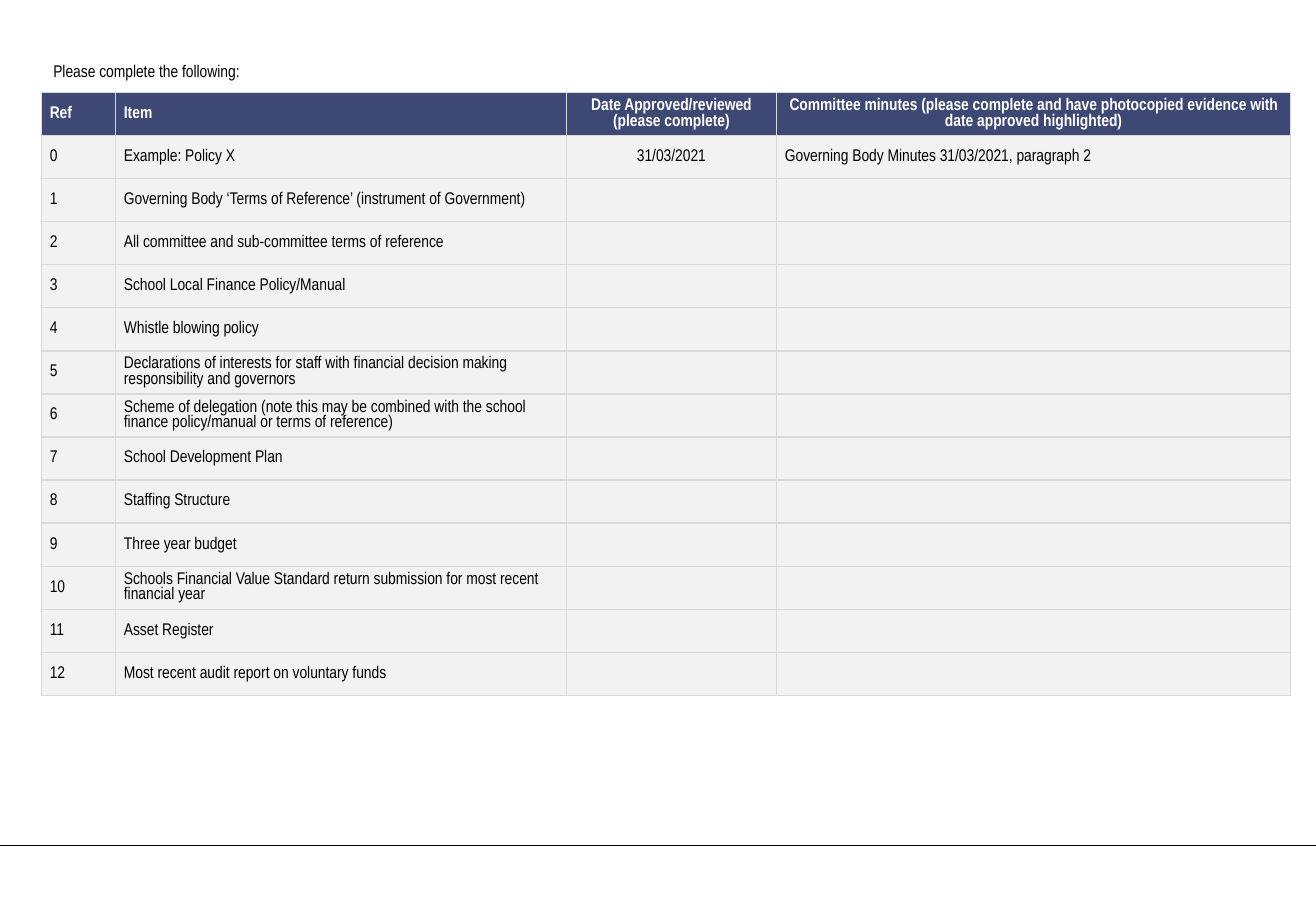
from lxml import etree
from pptx import Presentation
from pptx.dml import color
from pptx.enum import shapes, text
from pptx.oxml import ns
from pptx.util import Inches, Pt

FONT = "Arial Narrow"
NAVY, GREY, BORDER = "3E4875", "F2F2F2", "D9D9D9"
BLACK, WHITE = "000000", "FFFFFF"
COLUMN_WIDTHS = [0.61, 3.71, 1.73, 4.23]
HEADINGS = [
    "Ref",
    "Item",
    "Date Approved/reviewed (please complete)",
    "Committee minutes (please complete and have photocopied evidence with date approved highlighted)",
]
ITEMS = [
    "Example: Policy X",
    "Governing Body ‘Terms of Reference’ (instrument of Government)",
    "All committee and sub-committee terms of reference",
    "School Local Finance Policy/Manual",
    "Whistle blowing policy",
    "Declarations of interests for staff with financial decision making responsibility and governors",
    "Scheme of delegation (note this may be combined with the school finance policy/manual or terms of reference)",
    "School Development Plan",
    "Staffing Structure",
    "Three year budget",
    "Schools Financial Value Standard return submission for most recent financial year",
    "Asset Register",
    "Most recent audit report on voluntary funds",
]
EXAMPLE = ["31/03/2021", "Governing Body Minutes 31/03/2021, paragraph 2"]


def rgb(value):
    return color.RGBColor.from_string(value)


def format_runs(paragraph, ink, bold=False):
    for run in paragraph.runs:
        run.font.name = FONT
        run.font.size = Pt(10)
        run.font.bold = bold
        run.font.color.rgb = rgb(ink)


def add_borders(cell):
    properties = cell._tc.get_or_add_tcPr()
    for side in ("a:lnL", "a:lnR", "a:lnT", "a:lnB"):
        edge = etree.SubElement(properties, ns.qn(side), w=str(Pt(1)))
        fill = etree.SubElement(edge, ns.qn("a:solidFill"))
        etree.SubElement(fill, ns.qn("a:srgbClr"), val=BORDER)


def fill_cell(cell, words, heading, centred):
    add_borders(cell)
    cell.fill.solid()
    cell.fill.fore_color.rgb = rgb(NAVY if heading else GREY)
    cell.margin_left = cell.margin_right = Inches(0.07)
    cell.margin_top = cell.margin_bottom = 0
    cell.vertical_anchor = text.MSO_ANCHOR.MIDDLE
    cell.text_frame.text = words
    paragraph = cell.text_frame.paragraphs[0]
    if centred:
        paragraph.alignment = text.PP_ALIGN.CENTER
    format_runs(paragraph, WHITE if heading else BLACK, heading)


def add_checklist(slide):
    rows = [HEADINGS]
    for ref, item in enumerate(ITEMS):
        rows.append([str(ref), item] + (EXAMPLE if ref == 0 else ["", ""]))
    checklist = slide.shapes.add_table(
        len(rows), len(HEADINGS), Inches(0.34), Inches(0.76), Inches(10.28), Inches(4.97)
    ).table
    for column, width in zip(checklist.columns, COLUMN_WIDTHS):
        column.width = Inches(width)
    for r, row in enumerate(rows):
        for c, words in enumerate(row):
            heading = r == 0
            fill_cell(checklist.cell(r, c), words, heading, c == 2 or (heading and c == 3))


def add_instruction(slide, words):
    instruction = slide.shapes.add_textbox(Inches(0.34), Inches(0.45), Inches(9.79), Inches(0.27))
    frame = instruction.text_frame
    frame.word_wrap = True
    frame.auto_size = text.MSO_AUTO_SIZE.SHAPE_TO_FIT_TEXT
    frame.text = words
    format_runs(frame.paragraphs[0], BLACK)


def add_footer_rule(slide, width):
    rule = slide.shapes.add_connector(
        shapes.MSO_CONNECTOR.STRAIGHT, 0, Inches(6.96), width, Inches(6.96)
    )
    rule.line.color.rgb = rgb(BLACK)
    rule.line.width = Pt(0.5)
    etree.SubElement(rule._element.spPr, ns.qn("a:effectLst"))


def main():
    deck = Presentation()
    deck.slide_width, deck.slide_height = Inches(10.83), Inches(7.5)
    slide = deck.slides.add_slide(deck.slide_layouts[6])
    add_footer_rule(slide, deck.slide_width)
    add_checklist(slide)
    add_instruction(slide, "Please complete the following:")
    deck.save("out.pptx")


if __name__ == "__main__":
    main()
